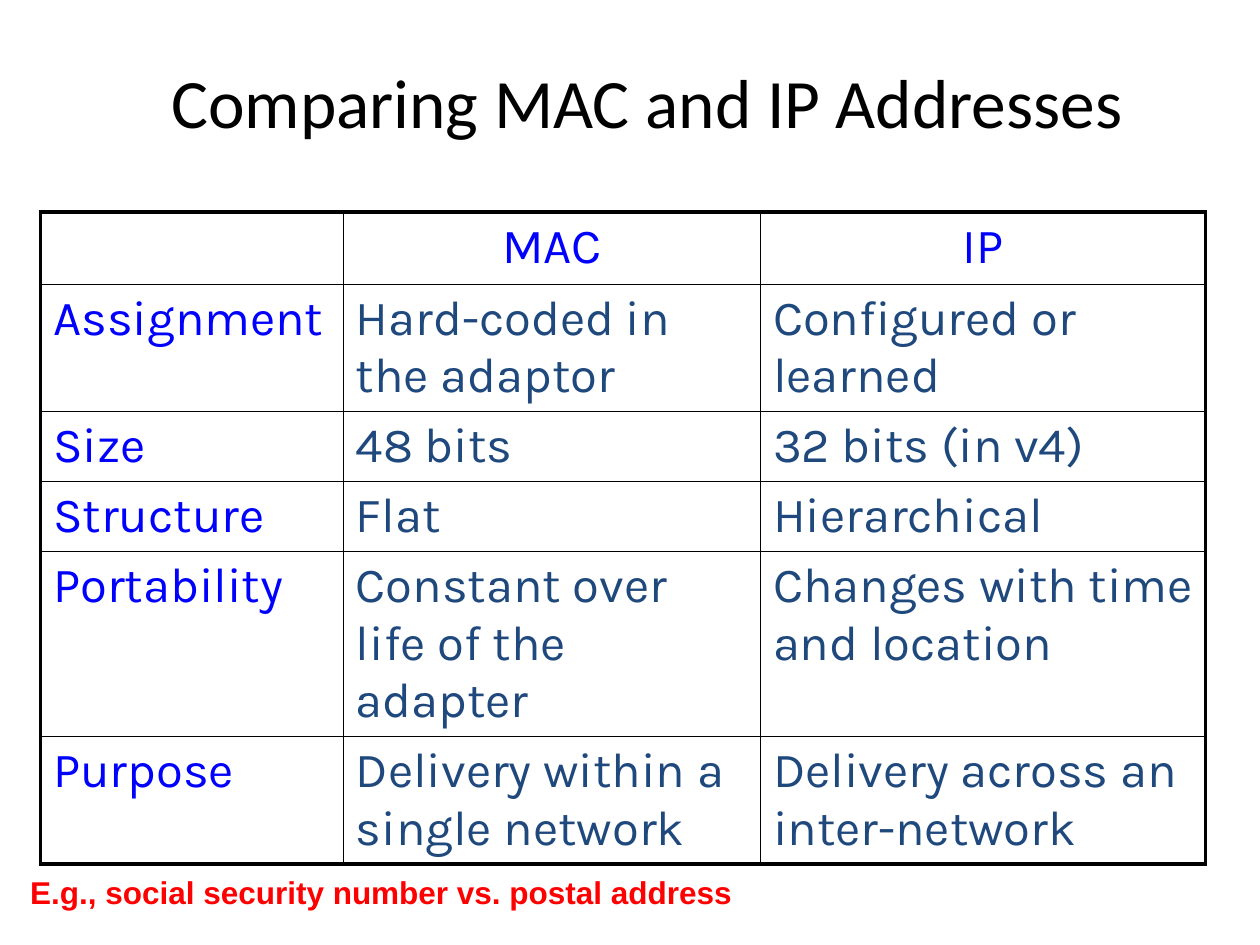
"""Build a slide that compares MAC and IP addresses in a table."""
from dataclasses import dataclass

from lxml import etree
from pptx import Presentation
from pptx import util as u
from pptx.dml.color import RGBColor
from pptx.enum import text as t
from pptx.oxml.ns import qn

BLACK, BLUE, NAVY, RED = "000000", "0000FF", "1F497D", "FF0000"
THIN, THICK = 1, 2.25
WIDTHS = (6.1, 8.41, 8.97)


@dataclass
class Row:
    name: str
    mac: str
    ip: str
    height: float


ROWS = [
    Row("", "MAC", "IP", 1.41),
    Row("Assignment", "Hard-coded in the adaptor", "Configured or learned", 2.56),
    Row("Size", "48 bits", "32 bits (in v4)", 1.41),
    Row("Structure", "Flat", "Hierarchical", 1.41),
    Row("Portability", "Constant over life of the adapter",
        "Changes with time and location", 3.73),
    Row("Purpose", "Delivery within a single network",
        "Delivery across an inter-network", 2.56),
]


def paint(color, code: str) -> None:
    color.rgb = RGBColor.from_string(code)


def write(frame, words: str, *, font: str, size: float, color: str,
          bold: bool = False, center: bool = False) -> None:
    para = frame.paragraphs[0]
    para.alignment = t.PP_ALIGN.CENTER if center else t.PP_ALIGN.LEFT
    if not words:
        para.font.size = u.Pt(size)
        return
    run = para.add_run()
    run.text = words
    run.font.name = font
    run.font.size = u.Pt(size)
    run.font.bold = bold
    paint(run.font.color, color)


def place(shape, left: float, top: float, width: float, height: float) -> None:
    shape.left, shape.top = u.Cm(left), u.Cm(top)
    shape.width, shape.height = u.Cm(width), u.Cm(height)


def frame_cell(cell, sides: dict[str, float]) -> None:
    props = cell._tc.get_or_add_tcPr()
    for spot, (side, width) in enumerate(sides.items()):
        line = etree.Element(qn(f"a:ln{side}"), w=str(u.Pt(width)))
        fill = etree.SubElement(line, qn("a:solidFill"))
        etree.SubElement(fill, qn("a:srgbClr"), val=BLACK)
        props.insert(spot, line)


def draw_table(slide) -> None:
    last, end = len(ROWS) - 1, len(WIDTHS) - 1
    high = sum(row.height for row in ROWS)
    table = slide.shapes.add_table(
        len(ROWS), len(WIDTHS), u.Cm(0.82), u.Cm(4.27),
        u.Cm(sum(WIDTHS)), u.Cm(high)).table
    table.first_row = table.horz_banding = False
    for col, width in zip(table.columns, WIDTHS):
        col.width = u.Cm(width)
    for i, row in enumerate(ROWS):
        table.rows[i].height = u.Cm(row.height)
        for j, words in enumerate((row.name, row.mac, row.ip)):
            cell = table.cell(i, j)
            cell.fill.background()
            write(cell.text_frame, words, font="Karla", size=28,
                  color=NAVY if i and j else BLUE, center=i == 0)
            frame_cell(cell, {
                "L": THICK if j == 0 else THIN,
                "R": THICK if j == end else THIN,
                "T": THICK if i == 0 else THIN,
                "B": THICK if i == last else THIN,
            })


def main() -> None:
    deck = Presentation()
    deck.slide_width, deck.slide_height = u.Cm(25.4), u.Cm(19.05)
    slide = deck.slides.add_slide(deck.slide_layouts[5])
    title = slide.shapes.title
    place(title, 0.36, 1.3, 25.37, 1.47)
    title.text_frame.auto_size = t.MSO_AUTO_SIZE.NONE
    title.text_frame.vertical_anchor = t.MSO_ANCHOR.MIDDLE
    write(title.text_frame, "Comparing MAC and IP Addresses",
          font="Calibri", size=39.6, color=BLACK, center=True)
    draw_table(slide)
    note = slide.shapes.add_textbox(0, 0, 0, 0)
    place(note, 0.36, 17.48, 19.81, 1.45)
    note.text_frame.word_wrap = True
    write(note.text_frame, "E.g., social security number vs. postal address",
          font="Arial", size=18, color=RED, bold=True)
    deck.save("out.pptx")


if __name__ == "__main__":
    main()
